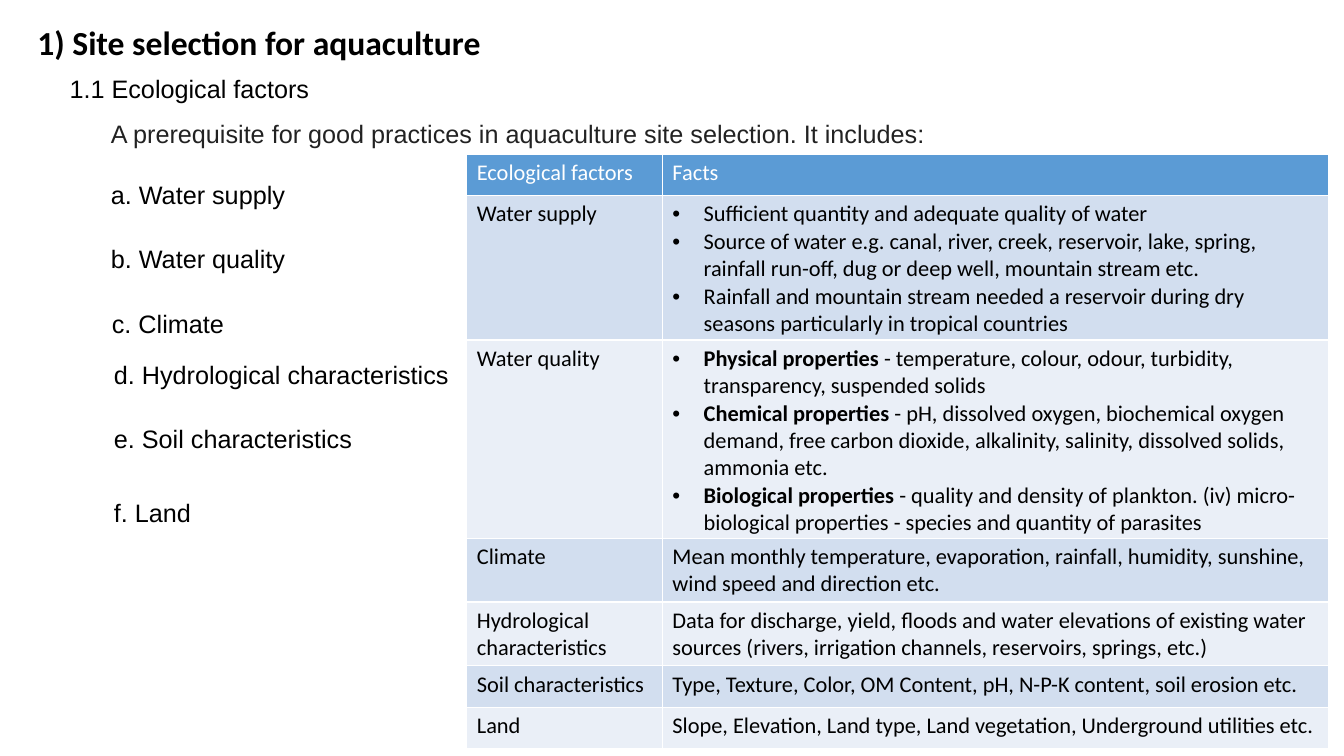
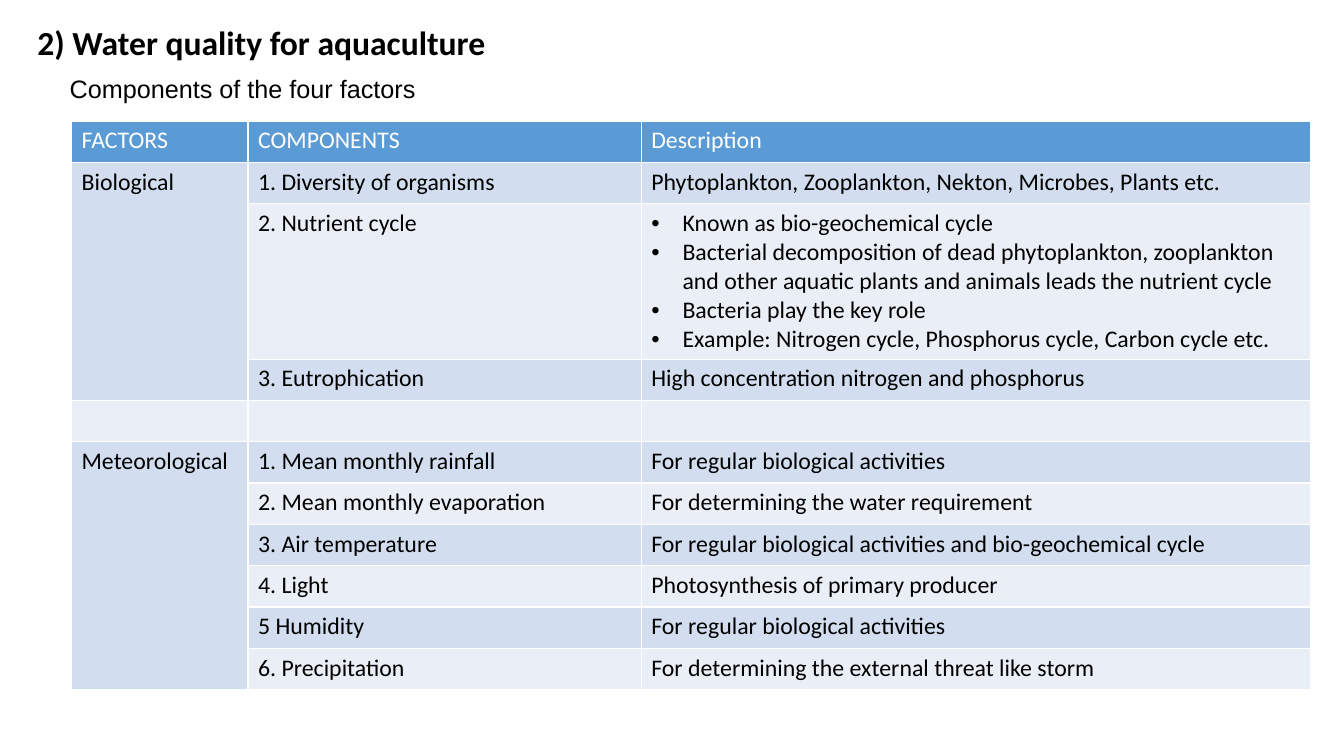
from lxml import etree
from pptx import Presentation
from pptx import util as u
from pptx.dml.color import RGBColor
from pptx.enum import text as t
from pptx.oxml import ns

PX = 9144  # 100 px to the inch
BLACK = RGBColor(0x00, 0x00, 0x00)
CHARCOAL = RGBColor(0x22, 0x22, 0x22)
WHITE = RGBColor(0xFF, 0xFF, 0xFF)
HEADER_BLUE = RGBColor(0x5B, 0x9B, 0xD5)
BANDS = (RGBColor(0xEA, 0xEF, 0xF7), RGBColor(0xD2, 0xDE, 0xEF))  # even, odd rows

TITLE_BOX = (27, 18, 475, 52)
ROW_HEIGHT = 41
BULLET_INDENT = 31
LIST_SIZE = 18
LIST_LINE = 20.7  # height in points of one line of the list

# Content: a list in a cell is bulleted, a pair is a bold lead and its text,
# and None continues the cell above
INTRO = "A prerequisite for good practices in aquaculture site selection. It includes:"
INTRO_BOX = (100, 112, 852, 40)
FACTOR_LIST_BOX = (100, 173, 363, 349)
FACTOR_LIST = [  # text, top, indent
    ("a. Water supply", 173, 0),
    ("b. Water quality", 235, 0),
    ("c. Climate", 298, 1),
    ("d. Hydrological characteristics", 348, 3),
    ("e. Soil characteristics", 410, 3),
    ("f. Land", 482, 3),
]
SITE_TABLE = {
    "box": (463, 153, 855, 588), "columns": (194, 661), "size": 16,
    "rows": [
        ("Ecological factors", "Facts"),
        ("Water supply", [
            "Sufficient quantity and adequate quality of water",
            "Source of water e.g. canal, river, creek, reservoir, lake, spring, "
            "rainfall run-off, dug or deep well, mountain stream etc.",
            "Rainfall and mountain stream needed a reservoir during dry seasons "
            "particularly in tropical countries"]),
        ("Water quality", [
            ("Physical properties",
             " - temperature, colour, odour, turbidity, transparency, suspended solids"),
            ("Chemical properties",
             " - pH, dissolved oxygen, biochemical oxygen demand, free carbon dioxide, "
             "alkalinity, salinity, dissolved solids, ammonia etc."),
            ("Biological properties",
             " - quality and density of plankton. (iv) micro-biological properties - "
             "species and quantity of parasites")]),
        ("Climate", "Mean monthly temperature, evaporation, rainfall, humidity, "
                    "sunshine, wind speed and direction etc."),
        ("Hydrological characteristics",
         "Data for discharge, yield, floods and water elevations of existing water "
         "sources (rivers, irrigation channels, reservoirs, springs, etc.)"),
        ("Soil characteristics",
         "Type, Texture, Color, OM Content, pH, N-P-K content, soil erosion etc."),
        ("Land", "Slope, Elevation, Land type, Land vegetation, Underground utilities etc."),
    ],
}
WATER_TABLE = {
    "box": (71, 120, 1229, 557), "columns": (175, 390, 664), "size": 17,
    "rows": [
        ("FACTORS", "COMPONENTS", "Description"),
        ("Biological", "1. Diversity of organisms",
         "Phytoplankton, Zooplankton, Nekton, Microbes, Plants etc."),
        (None, "2. Nutrient cycle", [
            "Known as bio-geochemical cycle",
            "Bacterial decomposition of dead phytoplankton, zooplankton and other "
            "aquatic plants and animals leads the nutrient cycle",
            "Bacteria play the key role",
            "Example: Nitrogen cycle, Phosphorus cycle, Carbon cycle etc."]),
        (None, "3. Eutrophication", "High concentration nitrogen and phosphorus"),
        ("", "", ""),
        ("Meteorological", "1. Mean monthly rainfall", "For regular biological activities"),
        (None, "2. Mean monthly evaporation", "For determining the water requirement"),
        (None, "3. Air temperature",
         "For regular biological activities and bio-geochemical cycle"),
        (None, "4. Light", "Photosynthesis of primary producer"),
        (None, "5 Humidity", "For regular biological activities"),
        (None, "6. Precipitation", "For determining the external threat like storm"),
    ],
}


def place(shape, box):
    shape.left, shape.top, shape.width, shape.height = (n * PX for n in box)


def style(paragraph, size, color=BLACK, font="Arial", bold=False):
    for run in paragraph.runs:
        run.font.name, run.font.size, run.font.bold = font, u.Pt(size), bold
        run.font.color.rgb = color


def set_bullet(paragraph, left=0, hanging=0, character=None):
    """Set the indent, with a bullet character or with none."""
    properties = paragraph._p.get_or_add_pPr()
    properties.set("marL", str(left * PX))
    properties.set("indent", str(-hanging * PX))
    if character:
        font = etree.SubElement(properties, ns.qn("a:buFont"))
        font.set("typeface", "Arial")
        etree.SubElement(properties, ns.qn("a:buChar")).set("char", character)
    else:
        etree.SubElement(properties, ns.qn("a:buNone"))


def add_slide(presentation, layout, title, subheading, subheading_width):
    slide = presentation.slides.add_slide(presentation.slide_layouts[layout])
    # Title
    shape = slide.shapes.title
    place(shape, TITLE_BOX)
    frame = shape.text_frame
    frame.text = title
    frame.auto_size = t.MSO_AUTO_SIZE.NONE
    frame.vertical_anchor = t.MSO_ANCHOR.MIDDLE
    paragraph = frame.paragraphs[0]
    paragraph.alignment = t.PP_ALIGN.LEFT
    paragraph.line_spacing = 0.9
    style(paragraph, 24, font="Calibri", bold=True)
    # Subheading
    fill_body(slide.placeholders[1], (59, 68, subheading_width, 40), [(subheading, 68, 0)])
    slide.placeholders[1].text_frame.paragraphs[0].alignment = t.PP_ALIGN.JUSTIFY
    return slide


def fill_body(shape, box, items):
    """Write lines whose tops are given, spacing each from the one before."""
    place(shape, box)
    frame = shape.text_frame
    frame.auto_size = t.MSO_AUTO_SIZE.NONE
    frame.margin_right = 0
    frame.text = "\n".join(item[0] for item in items)
    previous = None
    for paragraph, (_, top, indent) in zip(frame.paragraphs, items):
        set_bullet(paragraph, indent)
        gap = 0 if previous is None else (top - previous) * 0.72 - LIST_LINE
        paragraph.space_before = u.Pt(round(gap, 1))
        style(paragraph, LIST_SIZE)
        previous = top


def fill_cell(cell, content, size, color):
    bulleted = isinstance(content, list)
    frame = cell.text_frame
    for index, item in enumerate(content if bulleted else [content]):
        paragraph = frame.add_paragraph() if index else frame.paragraphs[0]
        if bulleted:
            set_bullet(paragraph, BULLET_INDENT, BULLET_INDENT, "•")
        if isinstance(item, tuple):
            for part in item:
                paragraph.add_run().text = part
        else:
            paragraph.text = item
        style(paragraph, size, color, "Calibri")
        if isinstance(item, tuple):
            paragraph.runs[0].font.bold = True


def add_table(slide, data):
    rows, columns = data["rows"], data["columns"]
    shape = slide.shapes.add_table(len(rows), len(columns), *(n * PX for n in data["box"]))
    table = shape.table
    for column, width in zip(table.columns, columns):
        column.width = width * PX
    for index, row in enumerate(rows):
        table.rows[index].height = ROW_HEIGHT * PX
        for column, content in enumerate(row):
            cell = table.cell(index, column)
            cell.fill.solid()
            cell.fill.fore_color.rgb = BANDS[index % 2] if index else HEADER_BLUE
            if content is not None:
                fill_cell(cell, content, data["size"], BLACK if index else WHITE)
    # Join each first-column cell with the continued cells below it
    start = 0
    for index in range(1, len(rows) + 1):
        if index == len(rows) or rows[index][0] is not None:
            if index - start > 1:
                table.cell(start, 0).merge(table.cell(index - 1, 0))
            start = index
    place(shape, data["box"])


def main():
    presentation = Presentation()
    presentation.slide_width, presentation.slide_height = 1333 * PX, 750 * PX

    # Site selection
    slide = add_slide(presentation, 3, "1) Site selection for aquaculture",
                      "1.1 Ecological factors", 266)
    intro = slide.shapes.add_textbox(*(n * PX for n in INTRO_BOX)).text_frame
    intro.word_wrap = True
    intro.text = INTRO
    style(intro.paragraphs[0], 18, CHARCOAL)
    fill_body(slide.placeholders[2], FACTOR_LIST_BOX, FACTOR_LIST)
    add_table(slide, SITE_TABLE)

    # Water quality
    slide = add_slide(presentation, 1, "2) Water quality for aquaculture",
                      "Components of the four factors", 397)
    add_table(slide, WATER_TABLE)

    presentation.save("out.pptx")


if __name__ == "__main__":
    main()
